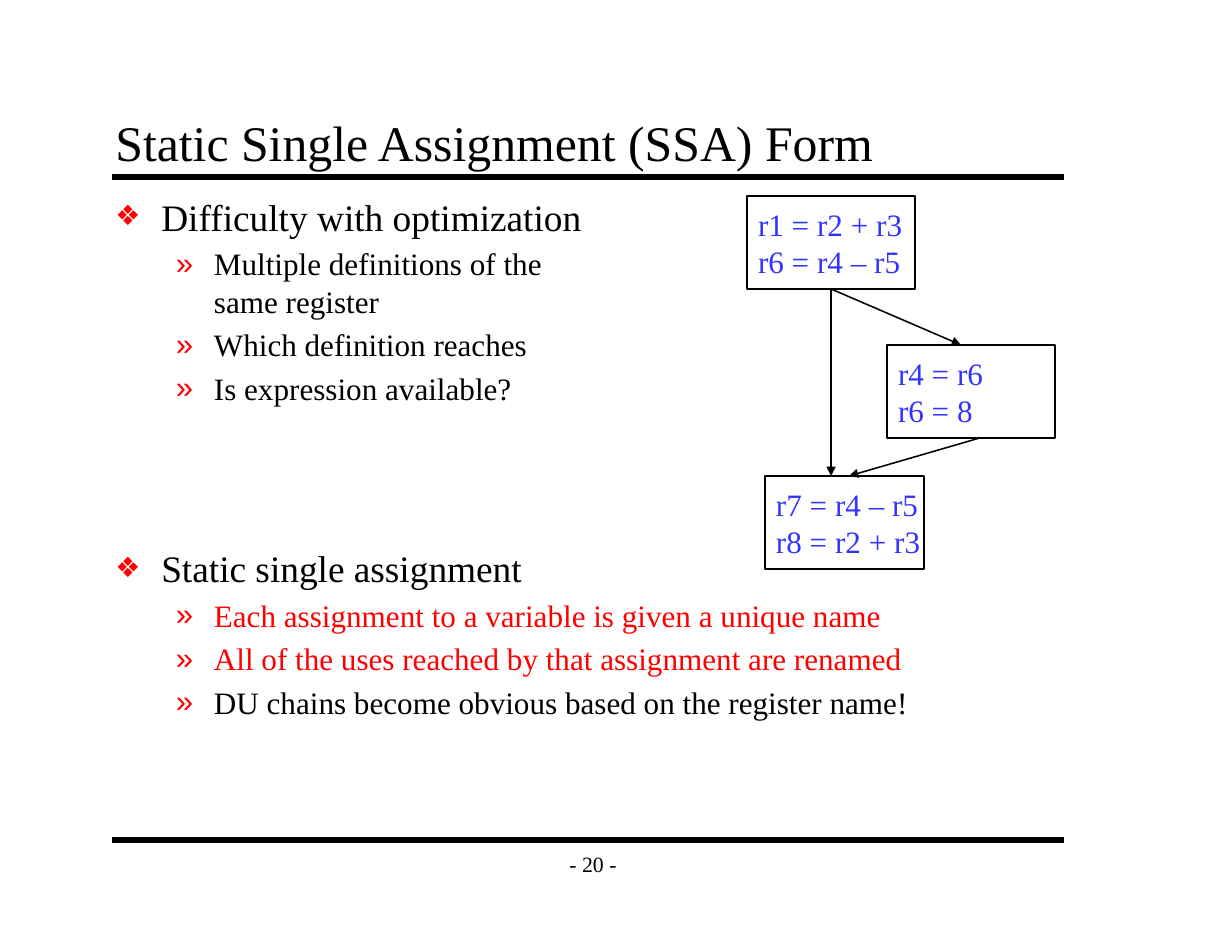
from dataclasses import dataclass

from lxml import etree
from pptx import Presentation
from pptx.dml.color import RGBColor
from pptx.enum.shapes import MSO_CONNECTOR, MSO_SHAPE
from pptx.enum.text import MSO_ANCHOR, MSO_AUTO_SIZE, PP_ALIGN
from pptx.oxml.ns import qn
from pptx.util import Inches, Pt

STRAIGHT = MSO_CONNECTOR.STRAIGHT
RECTANGLE = MSO_SHAPE.RECTANGLE
MIDDLE, BOTTOM, TOP = MSO_ANCHOR.MIDDLE, MSO_ANCHOR.BOTTOM, MSO_ANCHOR.TOP
LEFT, CENTER = PP_ALIGN.LEFT, PP_ALIGN.CENTER
NO_AUTOFIT = MSO_AUTO_SIZE.NONE
BOTTOM_SITE = 2


@dataclass(frozen=True)
class Theme:
    font: str = "Times New Roman"
    bullet_font: str = "Arial"
    black: str = "000000"
    red: str = "FF0000"
    code: str = "3333FF"
    title_size: int = 32
    topic_size: int = 24
    text_size: int = 20
    footer_size: int = 14
    line_height: float = 1.2
    rule_width: int = 4
    thin_width: int = 1


@dataclass(frozen=True)
class Box:
    left: float
    top: float
    width: float
    height: float


THEME = Theme()
# Level: size, left margin, hanging indent, bullet, bullet size in percent
LEVELS = (
    (THEME.topic_size, 0.41, 0.41, "❖", 75),
    (THEME.text_size, 0.88, 0.34, "»", 100),
)
# Text, level, colour, space before
POINTS = (
    ("Difficulty with optimization", 0, THEME.black, 0),
    ("Multiple definitions of the\vsame register", 1, THEME.black, 4),
    ("Which definition reaches", 1, THEME.black, 4),
    ("Is expression available?", 1, THEME.black, 4),
    ("Static single assignment", 0, THEME.black, 89),
    ("Each assignment to a variable is given a unique name", 1, THEME.red, 4),
    ("All of the uses reached by that assignment are renamed", 1, THEME.red, 4),
    ("DU chains become obvious based on the register name!", 1, THEME.black, 4),
)


def place(shape, box):
    shape.left, shape.top = Inches(box.left), Inches(box.top)
    shape.width, shape.height = Inches(box.width), Inches(box.height)


def set_frame(frame, anchor, wrap=True, side=0.11, edge=0.06):
    frame.auto_size = NO_AUTOFIT
    frame.word_wrap = wrap
    frame.vertical_anchor = anchor
    frame.margin_left = frame.margin_right = Inches(side)
    frame.margin_top = frame.margin_bottom = Inches(edge)


def set_paragraph(paragraph, text, size, color, align=LEFT):
    paragraph.text = text
    paragraph.alignment = align
    paragraph.line_spacing = Pt(size * THEME.line_height)
    paragraph.font.name = THEME.font
    paragraph.font.size = Pt(size)
    paragraph.font.color.rgb = RGBColor.from_string(color)


def set_bullet(paragraph, margin, hanging, character, percent):
    properties = paragraph._p.get_or_add_pPr()
    properties.set("marL", str(Inches(margin)))
    properties.set("indent", str(-Inches(hanging)))
    color = etree.SubElement(properties, qn("a:buClr"))
    etree.SubElement(color, qn("a:srgbClr"), val=THEME.red)
    etree.SubElement(properties, qn("a:buSzPct"), val=str(percent * 1000))
    etree.SubElement(properties, qn("a:buFont"), typeface=THEME.bullet_font)
    etree.SubElement(properties, qn("a:buChar"), char=character)


def add_line(slide, start, end, width, arrow=False):
    line = slide.shapes.add_connector(STRAIGHT, *map(Inches, start + end))
    line.line.color.rgb = RGBColor.from_string(THEME.black)
    line.line.width = Pt(width)
    if arrow:
        etree.SubElement(line.line._get_or_add_ln(), qn("a:tailEnd"), type="triangle")
    etree.SubElement(line._element.spPr, qn("a:effectLst"))
    return line


def add_title(slide, box):
    title = slide.shapes.title
    place(title, box)
    set_frame(title.text_frame, BOTTOM)
    set_paragraph(title.text_frame.paragraphs[0], "Static Single Assignment (SSA) Form",
                  THEME.title_size, THEME.black)


def add_points(slide, box):
    body = slide.placeholders[1]
    place(body, box)
    frame = body.text_frame
    set_frame(frame, TOP)
    for index, (text, level, color, space_before) in enumerate(POINTS):
        paragraph = frame.add_paragraph() if index else frame.paragraphs[0]
        size, *bullet = LEVELS[level]
        set_paragraph(paragraph, text, size, color)
        paragraph.level = level
        paragraph.space_before = Pt(space_before)
        set_bullet(paragraph, *bullet)


def add_block(slide, box, lines):
    block = slide.shapes.add_shape(RECTANGLE, 0, 0, 0, 0)
    place(block, box)
    block.shadow.inherit = False
    block.fill.background()
    block.line.color.rgb = RGBColor.from_string(THEME.black)
    block.line.width = Pt(THEME.thin_width)
    frame = block.text_frame
    set_frame(frame, MIDDLE, wrap=False, side=0.1, edge=0.05)
    for index, text in enumerate(lines):
        paragraph = frame.add_paragraph() if index else frame.paragraphs[0]
        set_paragraph(paragraph, text, THEME.text_size, THEME.code)
    return block


def add_flow_graph(slide, box):
    """Draw the entry, branch and join blocks with the edges between them."""
    height = 0.83
    right, bottom = box.left + box.width, box.top + box.height
    entry = Box(box.left, box.top, 1.5, height)
    branch = Box(right - 1.5, box.top + 1.33, 1.5, height)
    join = Box(box.left + 0.16, bottom - height, 1.42, height)

    entry_block = add_block(slide, entry, ("r1 = r2 + r3", "r6 = r4 – r5"))
    add_block(slide, branch, ("r4 = r6", "r6 = 8"))
    add_block(slide, join, ("r7 = r4 – r5", "r8 = r2 + r3"))

    exit_point = (entry.left + entry.width / 2, entry.top + height)
    for target in ((branch.left + 0.66, branch.top), (exit_point[0], join.top)):
        edge = add_line(slide, exit_point, target, THEME.thin_width, arrow=True)
        edge.begin_connect(entry_block, BOTTOM_SITE)
    add_line(slide, (branch.left + 0.83, branch.top + height),
             (join.left + 0.75, join.top), THEME.thin_width, arrow=True)


def add_rules(slide, box):
    for y in (box.top, box.top + box.height):
        add_line(slide, (box.left, y), (box.left + box.width, y), THEME.rule_width)


def add_page_number(slide, box):
    number = slide.shapes.add_textbox(0, 0, 0, 0)
    place(number, box)
    set_frame(number.text_frame, MIDDLE, wrap=False)
    set_paragraph(number.text_frame.paragraphs[0], "- 20 -",
                  THEME.footer_size, THEME.black, CENTER)


def main():
    presentation = Presentation()
    presentation.slide_width, presentation.slide_height = Inches(11), Inches(8.5)
    slide = presentation.slides.add_slide(presentation.slide_layouts[1])
    add_rules(slide, Box(1, 1.58, 8.5, 5.92))
    add_page_number(slide, Box(4.92, 7.5, 0.75, 0.42))
    add_title(slide, Box(0.92, 0.92, 8.5, 0.67))
    add_points(slide, Box(0.92, 1.67, 8.83, 5.7))
    add_flow_graph(slide, Box(6.67, 1.75, 2.75, 3.33))
    presentation.save("out.pptx")


if __name__ == "__main__":
    main()
